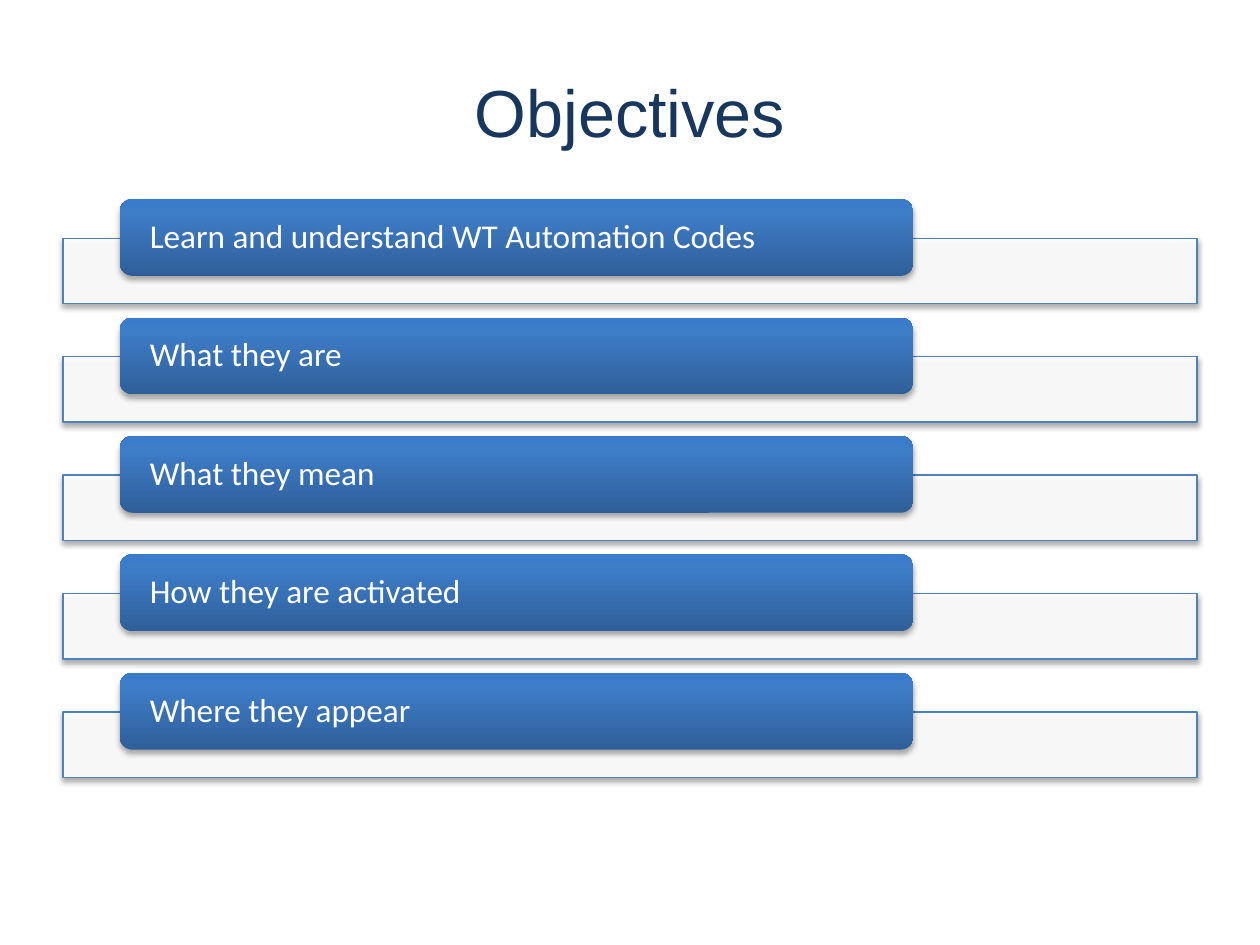
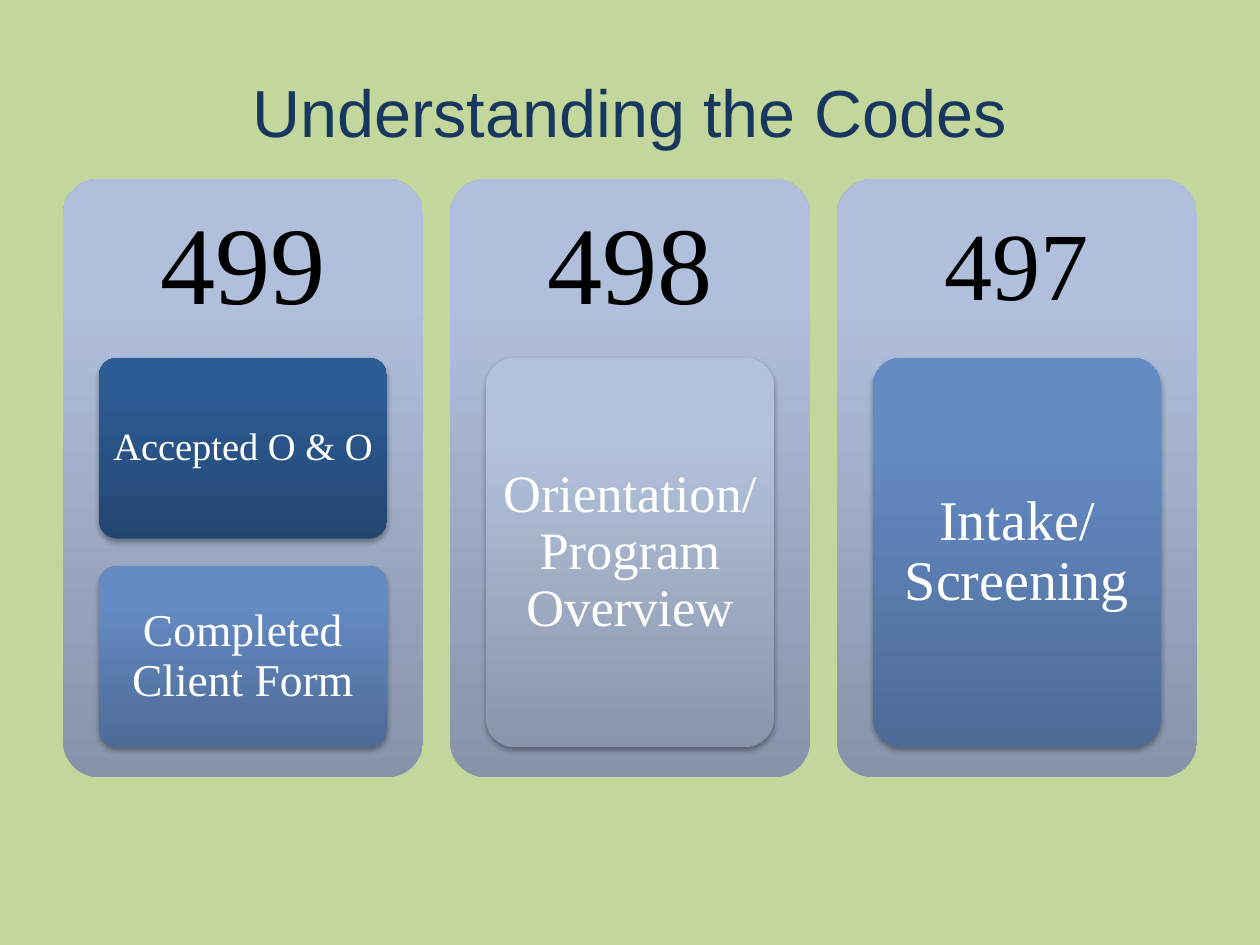
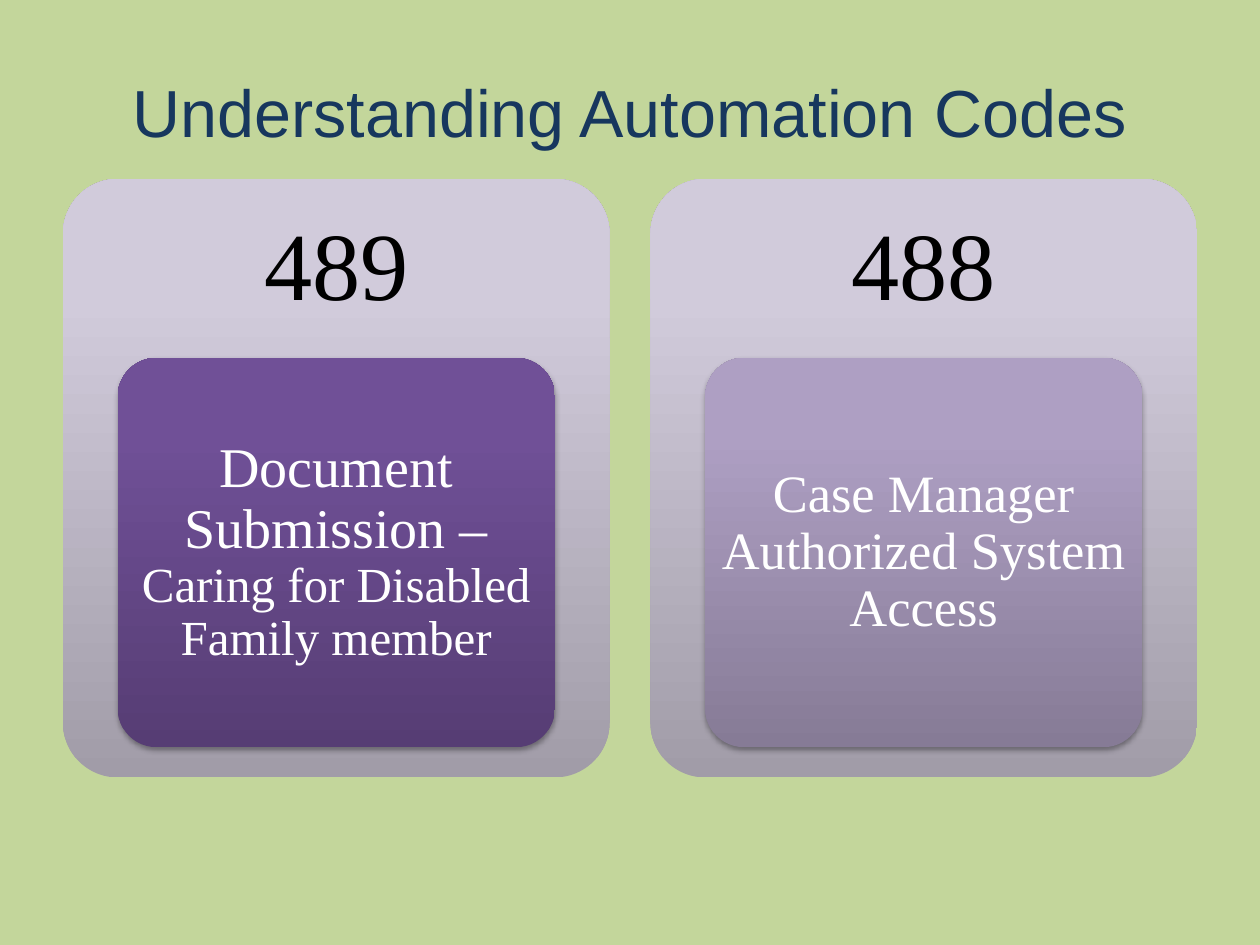
from copy import deepcopy

from lxml import etree
from pptx import Presentation
from pptx.dml.color import RGBColor
from pptx.enum.shapes import MSO_SHAPE
from pptx.enum.text import MSO_ANCHOR, PP_ALIGN
from pptx.oxml.ns import qn
from pptx.util import Inches, Pt

# Colours; gradients run from bottom to top
WHITE = RGBColor(0xFF, 0xFF, 0xFF)
BLACK = RGBColor(0x00, 0x00, 0x00)
NAVY = RGBColor(0x17, 0x37, 0x5E)
GREEN = RGBColor(0xC3, 0xD6, 0x9B)
BAR_LINE = RGBColor(0x4F, 0x81, 0xBD)
PILL_BLUE = [RGBColor(0x2F, 0x5F, 0x99), RGBColor(0x3D, 0x7C, 0xC7), RGBColor(0x3A, 0x7C, 0xCB)]
PANEL_BLUE = [RGBColor(0x87, 0x93, 0xAA), RGBColor(0xB0, 0xBF, 0xDC), RGBColor(0xB0, 0xC0, 0xDE)]
DARK_BLUE = [RGBColor(0x23, 0x46, 0x71), RGBColor(0x2D, 0x5B, 0x93), RGBColor(0x2B, 0x5C, 0x96)]
MID_BLUE = [RGBColor(0x4D, 0x6B, 0x97), RGBColor(0x64, 0x8B, 0xC4), RGBColor(0x63, 0x8B, 0xC7)]
PALE_BLUE = [RGBColor(0x8A, 0x95, 0xAA), RGBColor(0xB3, 0xC2, 0xDC), RGBColor(0xB4, 0xC3, 0xDE)]
PANEL_LILAC = [RGBColor(0xA1, 0x9C, 0xA8), RGBColor(0xD1, 0xCB, 0xDB), RGBColor(0xD2, 0xCB, 0xDC)]
PURPLE = [RGBColor(0x56, 0x3D, 0x74), RGBColor(0x70, 0x50, 0x97), RGBColor(0x70, 0x4F, 0x99)]
LILAC = [RGBColor(0x86, 0x7B, 0x96), RGBColor(0xAE, 0x9F, 0xC3), RGBColor(0xAE, 0x9F, 0xC4)]
STOPS = (0, 0.8, 1)

# Content
OBJECTIVES = [
    "Learn and understand WT Automation Codes",
    "What they are",
    "What they mean",
    "How they are activated",
    "Where they appear",
]

# title, panel gradient, columns of (code, size, cells of (gradient, runs of (text, size)))
CODE_SLIDES = [
    ("Understanding the Codes", PANEL_BLUE, [
        ("499", 63, [(DARK_BLUE, [("Accepted O & O", 22)]),
                     (MID_BLUE, [("Completed Client Form", 26)])]),
        ("498", 63, [(PALE_BLUE, [("Orientation/Program Overview", 30)])]),
        ("497", 55, [(MID_BLUE, [("Intake/ Screening", 32)])]),
    ]),
    ("Understanding Automation Codes", PANEL_LILAC, [
        ("489", 55, [(PURPLE, [("Document Submission – ", 32),
                               ("Caring for Disabled Family member", 28)])]),
        ("488", 55, [(LILAC, [("Case Manager Authorized System Access", 30)])]),
    ]),
]

# Layout in inches
LEFT, WIDTH = 0.5, 9
PILL_TOP, PILL_H, BAR_DROP, BAR_H, PITCH = 1.58, 0.61, 0.31, 0.52, 0.94
PANEL_TOP, PANEL_H, HEAD_H = 1.42, 4.75, 1.43
CELL_TOP, CELLS_H, CELL_GAP = 2.84, 3.09, 0.22


def add_text(tf, runs, font="Times New Roman", color=WHITE, align=PP_ALIGN.CENTER,
             spacing=0.9, margins=(0.01, 0, 0.01, 0)):
    """Write (text, size) runs as one paragraph, centred vertically."""
    tf.word_wrap = True
    tf.vertical_anchor = MSO_ANCHOR.MIDDLE
    tf.margin_left, tf.margin_top, tf.margin_right, tf.margin_bottom = map(Inches, margins)
    p = tf.paragraphs[0]
    p.alignment, p.line_spacing = align, spacing
    for text, size in runs:
        r = p.add_run()
        r.text = text
        r.font.name, r.font.size, r.font.color.rgb = font, Pt(size), color


def add_box(s, kind, left, top, width, height, gradient=None, adj=None, shadow=True):
    sp = s.shapes.add_shape(kind, *map(Inches, (left, top, width, height)))
    sp.line.fill.background()
    sp.shadow.inherit = False
    spPr = sp._element.spPr
    if adj is not None:
        sp.adjustments[0] = adj
    if gradient:
        sp.fill.gradient()
        sp.fill.gradient_angle = 90
        stops = spPr.find(".//" + qn("a:gsLst"))
        stops.append(deepcopy(stops[-1]))
        for stop, position, color in zip(sp.fill.gradient_stops, STOPS, gradient):
            stop.position, stop.color.rgb = position, color
    if shadow:
        outer = etree.SubElement(spPr.find(qn("a:effectLst")), qn("a:outerShdw"),
                                 blurRad="40000", dist="23000", dir="5400000", rotWithShape="0")
        black = etree.SubElement(outer, qn("a:srgbClr"), val=str(BLACK))
        etree.SubElement(black, qn("a:alpha"), val="35000")
    return sp


def add_slide(prs, title, background):
    s = prs.slides.add_slide(prs.slide_layouts[5])
    s.background.fill.solid()
    s.background.fill.fore_color.rgb = background
    sp = s.shapes.title
    sp.left, sp.top, sp.width, sp.height = map(Inches, (LEFT, 0.42, WIDTH, 0.92))
    add_text(sp.text_frame, [(title, 38)], font="Arial", color=NAVY, spacing=1,
             margins=(0.1, 0.05, 0.1, 0.05))
    return s


def add_objectives(prs):
    s = add_slide(prs, "Objectives", WHITE)
    for i, objective in enumerate(OBJECTIVES):
        top = PILL_TOP + i * PITCH
        # Outlined bar behind
        bar = add_box(s, MSO_SHAPE.RECTANGLE, LEFT, top + BAR_DROP, WIDTH, BAR_H)
        bar.fill.solid()
        bar.fill.fore_color.rgb = WHITE
        color = bar._element.spPr.find(qn("a:solidFill"))[0]
        etree.SubElement(color, qn("a:alpha"), val="90000")
        bar.line.color.rgb, bar.line.width = BAR_LINE, Pt(0.75)
        # Pill with the objective
        pill = add_box(s, MSO_SHAPE.ROUNDED_RECTANGLE, LEFT + 0.45, top, 6.3, PILL_H, PILL_BLUE)
        add_text(pill.text_frame, [(objective, 19)], font="Calibri", align=PP_ALIGN.LEFT,
                 margins=(0.21, 0, 0.21, 0))


def add_codes(prs, title, panel_gradient, columns):
    s = add_slide(prs, title, GREEN)
    n = len(columns)
    panel_w = WIDTH / (n + 0.075 * (n - 1))
    for i, (code, size, cells) in enumerate(columns):
        left = LEFT + i * 1.075 * panel_w
        # Panel with the code in its head
        panel = add_box(s, MSO_SHAPE.ROUNDED_RECTANGLE, left, PANEL_TOP, panel_w, PANEL_H,
                        panel_gradient, adj=0.1, shadow=False)
        add_text(panel.text_frame, [(code, size)], color=BLACK,
                 margins=(0.1, 0, 0.1, PANEL_H - HEAD_H))
        # Cells stacked below the head
        cell_h = (CELLS_H - CELL_GAP * (len(cells) - 1)) / len(cells)
        for j, (gradient, runs) in enumerate(cells):
            cell = add_box(s, MSO_SHAPE.ROUNDED_RECTANGLE, left + 0.1 * panel_w,
                           CELL_TOP + j * (cell_h + CELL_GAP), 0.8 * panel_w, cell_h,
                           gradient, adj=0.1)
            add_text(cell.text_frame, runs)


def main():
    prs = Presentation()
    prs.slide_width, prs.slide_height = Inches(10), Inches(7.5)
    add_objectives(prs)
    for title, panel_gradient, columns in CODE_SLIDES:
        add_codes(prs, title, panel_gradient, columns)
    prs.save("out.pptx")


if __name__ == "__main__":
    main()
